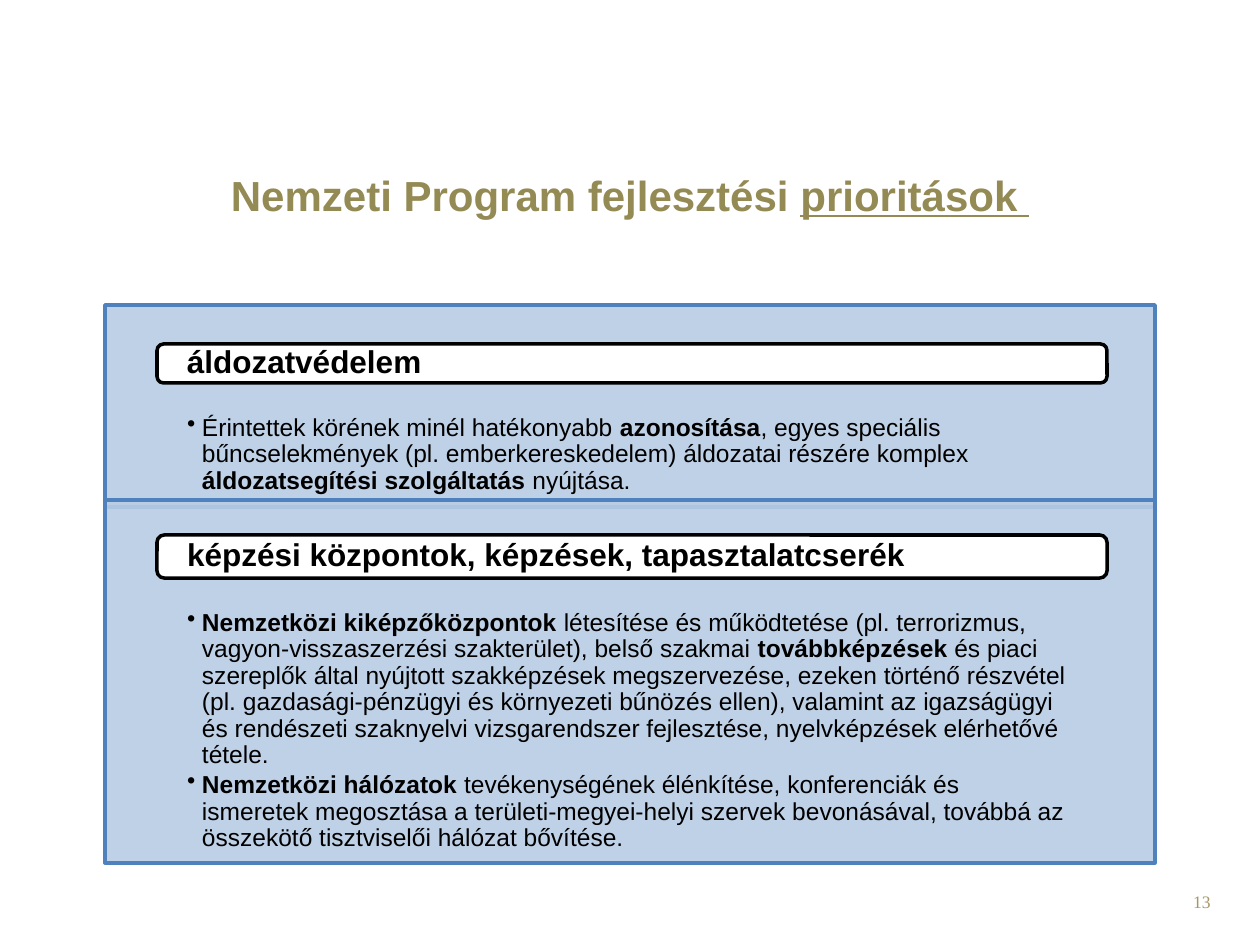
"""Builds a slide on the development priorities of the national programme."""
from pptx import Presentation
from pptx import util as u
from pptx.dml.color import RGBColor
from pptx.enum import shapes, text
from pptx.oxml.ns import qn
from lxml import etree

THEME = {
    "font": "Arial", "number_font": "Times New Roman",
    "title": "948A54", "panel": "B9CDE5", "border": "4F81BD",
    "heading_fill": "FFFFFF", "ink": "000000", "number": "A69765",
    "title_size": 24, "heading_size": 18, "body_size": 14, "number_size": 10,
}
TITLE = [("Nemzeti Program fejlesztési ", False), ("prioritások ", True)]
PAGE_NUMBER = "13"
SECTIONS = [
    {"heading": "áldozatvédelem", "panel": (305, 202), "pill": (344, 39), "bullets": [
        [("Érintettek körének minél hatékonyabb ", False), ("azonosítása", True),
         (", egyes speciális bűncselekmények (pl. emberkereskedelem) áldozatai részére komplex ", False),
         ("áldozatsegítési szolgáltatás ", True), ("nyújtása.", False)]]},
    {"heading": "képzési központok, képzések, tapasztalatcserék", "panel": (500, 363), "pill": (535, 43), "bullets": [
        [("Nemzetközi kiképzőközpontok ", True),
         ("létesítése és működtetése (pl. terrorizmus, vagyon-visszaszerzési szakterület), belső szakmai ", False),
         ("továbbképzések", True),
         (" és piaci szereplők által nyújtott szakképzések megszervezése, ezeken történő részvétel "
          "(pl. gazdasági-pénzügyi és környezeti bűnözés ellen), valamint az igazságügyi és rendészeti "
          "szaknyelvi vizsgarendszer fejlesztése, nyelvképzések elérhetővé tétele.", False)],
        [("Nemzetközi hálózatok", True),
         (" tevékenységének élénkítése, konferenciák és ismeretek megosztása a területi-megyei-helyi "
          "szervek bevonásával, továbbá az összekötő tisztviselői hálózat bővítése.", False)]]},
]
PANEL_X, PANEL_W = 105, 1050
PILL_X, PILL_W = 157, 950
BULLET_INDENT = 15


def px(length):
    return u.Emu(round(length * 914400 / 126))


def style(run, size, color, bold=False, font=THEME["font"]):
    run.font.name = font
    run.font.size = u.Pt(size)
    run.font.bold = bold
    run.font.color.rgb = RGBColor.from_string(color)


def set_frame(frame, insets, anchor):
    frame.word_wrap = True
    frame.auto_size = text.MSO_AUTO_SIZE.NONE
    frame.vertical_anchor = anchor
    frame.margin_left, frame.margin_top, frame.margin_right, frame.margin_bottom = map(px, insets)


def add_box(slide, preset, place, fill, border):
    box = slide.shapes.add_shape(preset, *map(px, place))
    box.shadow.inherit = False
    box.fill.solid()
    box.fill.fore_color.rgb = RGBColor.from_string(fill)
    box.line.color.rgb = RGBColor.from_string(border)
    box.line.width = u.Pt(2)
    return box


def add_bullet(paragraph, pieces):
    properties = paragraph._p.get_or_add_pPr()
    properties.set("marL", str(px(BULLET_INDENT)))
    properties.set("indent", str(-px(BULLET_INDENT)))
    etree.SubElement(properties, qn("a:buChar")).set("char", "•")
    paragraph.alignment = text.PP_ALIGN.LEFT
    paragraph.line_spacing = 0.9
    paragraph.space_after = u.Pt(2)
    for words, bold in pieces:
        run = paragraph.add_run()
        run.text = words
        style(run, THEME["body_size"], THEME["ink"], bold)


def add_section(slide, section):
    top, height = section["panel"]
    panel = add_box(slide, shapes.MSO_SHAPE.RECTANGLE, (PANEL_X, top, PANEL_W, height),
                    THEME["panel"], THEME["border"])
    color = panel.fill._xPr.find(qn("a:solidFill"))[0]
    etree.SubElement(color, qn("a:alpha")).set("val", "90000")
    frame = panel.text_frame
    set_frame(frame, (82, 110, 82, 14), text.MSO_ANCHOR.TOP)
    for index, pieces in enumerate(section["bullets"]):
        add_bullet(frame.add_paragraph() if index else frame.paragraphs[0], pieces)

    top, height = section["pill"]
    pill = add_box(slide, shapes.MSO_SHAPE.ROUNDED_RECTANGLE, (PILL_X, top, PILL_W, height),
                   THEME["heading_fill"], THEME["ink"])
    set_frame(pill.text_frame, (28, 0, 28, 0), text.MSO_ANCHOR.MIDDLE)
    pill.text_frame.text = section["heading"]
    heading = pill.text_frame.paragraphs[0]
    heading.alignment = text.PP_ALIGN.LEFT
    heading.line_spacing = 0.9
    style(heading.runs[0], THEME["heading_size"], THEME["ink"], True)


def add_title(slide):
    title = slide.shapes.title
    title.left, title.top, title.width, title.height = map(px, (99, 165, 1062, 59))
    set_frame(title.text_frame, (0, 0, 0, 0), text.MSO_ANCHOR.MIDDLE)
    line = title.text_frame.paragraphs[0]
    line.alignment = text.PP_ALIGN.CENTER
    for words, underlined in TITLE:
        run = line.add_run()
        run.text = words
        style(run, THEME["title_size"], THEME["title"], True)
        run.font.underline = underlined


def add_page_number(slide):
    number = slide.shapes.add_textbox(*map(px, (929, 885, 294, 50)))
    number.text_frame.word_wrap = True
    number.text_frame.text = PAGE_NUMBER
    line = number.text_frame.paragraphs[0]
    line.alignment = text.PP_ALIGN.RIGHT
    style(line.runs[0], THEME["number_size"], THEME["number"], font=THEME["number_font"])


def main():
    deck = Presentation()
    deck.slide_width, deck.slide_height = px(1260), px(945)
    slide = deck.slides.add_slide(deck.slide_layouts[5])
    add_title(slide)
    for section in SECTIONS:
        add_section(slide, section)
    add_page_number(slide)
    deck.save("out.pptx")


if __name__ == "__main__":
    main()
